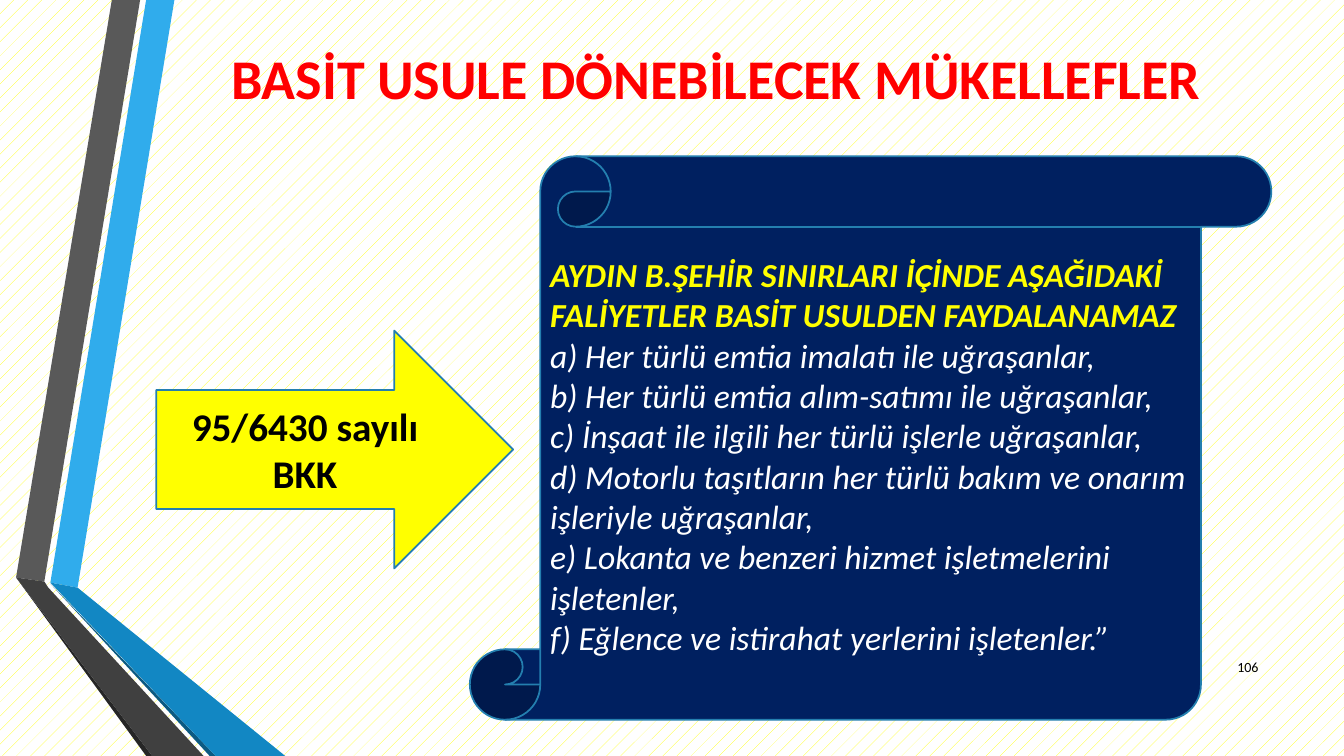
from pptx import Presentation
from pptx.dml.color import RGBColor
from pptx.enum.dml import MSO_PATTERN
from pptx.enum.shapes import MSO_SHAPE
from pptx.enum.text import MSO_ANCHOR, PP_ALIGN
from pptx.util import Inches, Pt

WIDTH, HEIGHT = 13.33, 7.5
WHITE = RGBColor(0xFF, 0xFF, 0xFF)
BLACK = RGBColor(0x00, 0x00, 0x00)
YELLOW = RGBColor(0xFF, 0xFF, 0x00)
RED = RGBColor(0xFF, 0x00, 0x00)
NAVY = RGBColor(0x00, 0x20, 0x60)
OUTLINE = RGBColor(0x24, 0x7F, 0xAF)
SKY = RGBColor(0x30, 0xAC, 0xEC)
BLUE = RGBColor(0x12, 0x87, 0xC3)
DEEP_BLUE = RGBColor(0x0C, 0x5A, 0x82)
GRAY = RGBColor(0x59, 0x59, 0x59)
DARK_GRAY = RGBColor(0x40, 0x40, 0x40)
CHARCOAL = RGBColor(0x26, 0x26, 0x26)

TITLE = "BASİT USULE DÖNEBİLECEK MÜKELLEFLER"
DECREE = "95/6430 sayılı BKK"
HEADING = "AYDIN B.ŞEHİR SINIRLARI İÇİNDE AŞAĞIDAKİ FALİYETLER BASİT USULDEN FAYDALANAMAZ"
ACTIVITIES = [
    "a) Her türlü emtia imalatı ile uğraşanlar,",
    "b) Her türlü emtia alım-satımı ile uğraşanlar,",
    "c) İnşaat ile ilgili her türlü işlerle uğraşanlar,",
    "d) Motorlu taşıtların her türlü bakım ve onarım işleriyle uğraşanlar,",
    "e) Lokanta ve benzeri hizmet işletmelerini işletenler,",
    "f) Eğlence ve istirahat yerlerini işletenler.”",
]

# Ribbon bands: colour and corners in inches from the band box's top left
RIBBON_BANDS = [
    (SKY, [(0.34, 5.78), (0.61, 5.83), (1.57, 0), (1.29, 0)]),
    (GRAY, [(1.23, 0), (0.95, 0), (0, 5.73), (0.28, 5.77)]),
    (CHARCOAL, [(0, 5.73), (1.29, 7.5), (1.35, 7.5)]),
    (DEEP_BLUE, [(0.34, 5.79), (1.92, 7.5), (1.98, 7.5)]),
    (BLUE, [(0.34, 5.78), (1.98, 7.5), (2.67, 7.5), (0.61, 5.83)]),
    (DARK_GRAY, [(1.86, 7.5), (0.32, 5.83), (0.28, 5.77), (0, 5.73), (1.35, 7.5)]),
]


def write(shape, lines, align):
    """Fill a shape with (text, font format) lines, centred vertically."""
    frame = shape.text_frame
    frame.word_wrap = True
    frame.vertical_anchor = MSO_ANCHOR.MIDDLE
    for index, (text, font_format) in enumerate(lines):
        para = frame.add_paragraph() if index else frame.paragraphs[0]
        para.alignment = align
        span = para.add_run()
        span.text = text
        span.font.name = "Calibri"
        span.font.color.rgb = font_format["color"]
        for name, value in font_format.items():
            if name != "color":
                setattr(span.font, name, value)


def add_text(page, box, text, align, **font_format):
    text_box = page.shapes.add_textbox(*map(Inches, box))
    write(text_box, [(text, font_format)], align)


def add_panel(page, box, kind, fill, lines, align):
    panel = page.shapes.add_shape(kind, *map(Inches, box))
    panel.shadow.inherit = False
    panel.fill.solid()
    panel.fill.fore_color.rgb = fill
    panel.line.color.rgb = OUTLINE
    panel.line.width = Pt(1.25)
    write(panel, lines, align)


def add_ribbon(page, left, top):
    for color, corners in RIBBON_BANDS:
        start, *rest = [(Inches(left + x), Inches(top + y)) for x, y in corners]
        builder = page.shapes.build_freeform(*start)
        builder.add_line_segments(rest, close=True)
        band = builder.convert_to_shape()
        band.shadow.inherit = False
        band.fill.solid()
        band.fill.fore_color.rgb = color
        band.line.fill.background()


def add_background(page):
    fill = page.background.fill
    fill.patterned()
    fill.pattern = MSO_PATTERN.PERCENT_5
    fill.fore_color.rgb = YELLOW
    fill.back_color.rgb = WHITE


def add_decree_arrow(page, box):
    label = {"size": Pt(28), "bold": True, "color": BLACK}
    add_panel(page, box, MSO_SHAPE.RIGHT_ARROW, YELLOW, [(DECREE, label)], PP_ALIGN.CENTER)


def add_activity_scroll(page, box):
    item = {"size": Pt(24), "bold": False, "italic": True, "color": WHITE}
    heading = {**item, "bold": True, "color": YELLOW}
    lines = [(HEADING, heading)] + [(text, item) for text in ACTIVITIES]
    add_panel(page, box, MSO_SHAPE.VERTICAL_SCROLL, NAVY, lines, PP_ALIGN.LEFT)


def main():
    deck = Presentation()
    deck.slide_width, deck.slide_height = Inches(WIDTH), Inches(HEIGHT)
    page = deck.slides.add_slide(deck.slide_layouts[6])
    add_background(page)
    add_ribbon(page, 0.16, 0)
    add_text(page, (1.62, 0.29, 10.96, 0.94), TITLE, PP_ALIGN.CENTER,
             size=Pt(40), bold=True, color=RED)
    add_text(page, (11.98, 6.42, 0.6, 0.4), "106", PP_ALIGN.RIGHT,
             size=Pt(10), color=BLACK)
    add_decree_arrow(page, (1.55, 3.28, 3.54, 2.36))
    add_activity_scroll(page, (4.66, 1.55, 7.95, 5.59))
    deck.save("out.pptx")


if __name__ == "__main__":
    main()
